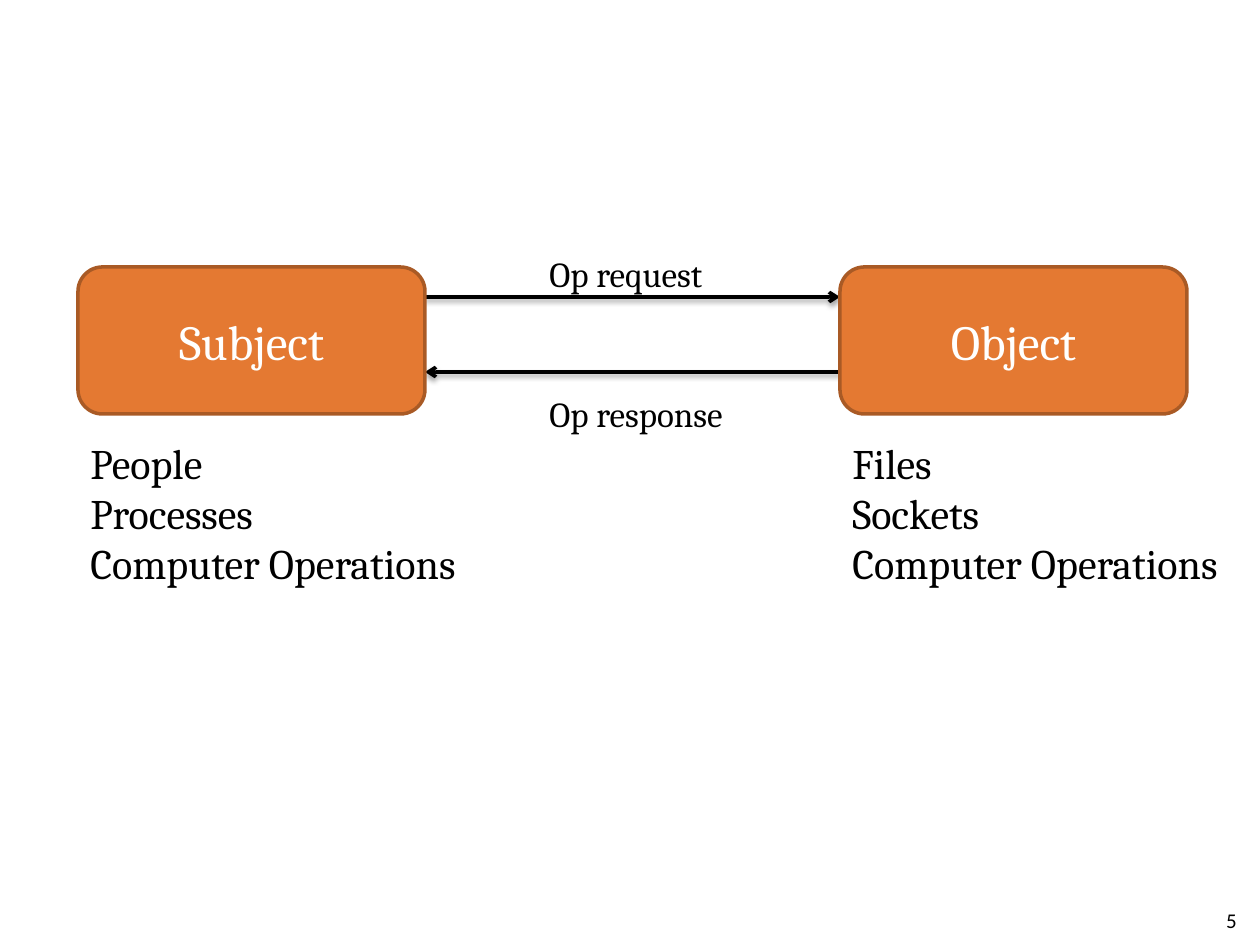
from dataclasses import dataclass

from lxml.etree import SubElement
from pptx import Presentation
from pptx.dml.color import RGBColor
from pptx.enum.shapes import MSO_CONNECTOR, MSO_SHAPE
from pptx.enum.text import MSO_ANCHOR, PP_ALIGN
from pptx.oxml.ns import qn
from pptx.util import Emu, Pt


@dataclass(frozen=True)
class Theme:
    ink: str = "000000"
    pale: str = "FFFFFE"
    fill: str = "E47932"
    edge: str = "A95A25"
    font: str = "Cambria"
    plain: str = "Calibri"
    head: int = 28
    body: int = 24
    label: int = 20
    foot: int = 12
    line: int = 2


LOOK = Theme()


def px(num):
    """Turn pixels, 126 to the inch, into EMU."""
    return Emu(round(num * 914400 / 126))


def write(frame, lines, size, color=LOOK.ink, font=LOOK.font, align=PP_ALIGN.LEFT):
    for i, line in enumerate(lines):
        para = frame.paragraphs[0] if i == 0 else frame.add_paragraph()
        para.alignment = align
        run = para.add_run()
        run.text = line
        run.font.size = Pt(size)
        run.font.name = font
        run.font.color.rgb = RGBColor.from_string(color)


def add_text(slide, area, lines, size, **style):
    box = slide.shapes.add_textbox(*map(px, area))
    box.text_frame.word_wrap = False
    write(box.text_frame, lines, size, **style)
    return box


def add_node(slide, area, name):
    node = slide.shapes.add_shape(MSO_SHAPE.ROUNDED_RECTANGLE, *map(px, area))
    node.shadow.inherit = False
    node.fill.solid()
    node.fill.fore_color.rgb = RGBColor.from_string(LOOK.fill)
    node.line.color.rgb = RGBColor.from_string(LOOK.edge)
    node.line.width = Pt(LOOK.line)
    node.text_frame.vertical_anchor = MSO_ANCHOR.MIDDLE
    write(node.text_frame, [name], LOOK.head, LOOK.pale, align=PP_ALIGN.CENTER)


def add_arrow(slide, start, end, y):
    """Draw a level arrow with a soft shadow below it."""
    arrow = slide.shapes.add_connector(
        MSO_CONNECTOR.STRAIGHT, px(start), px(y), px(end), px(y))
    arrow.line.color.rgb = RGBColor.from_string(LOOK.ink)
    arrow.line.width = Pt(LOOK.line)
    props = arrow.element.spPr
    SubElement(props.find(qn("a:ln")), qn("a:tailEnd"), type="arrow")
    effect = SubElement(props, qn("a:effectLst"))
    shade = SubElement(effect, qn("a:outerShdw"), blurRad="40000", dist="20000",
                       dir="5400000", rotWithShape="0")
    color = SubElement(shade, qn("a:srgbClr"), val=LOOK.ink)
    SubElement(color, qn("a:alpha"), val="38000")


def main():
    deck = Presentation()
    deck.slide_width, deck.slide_height = px(1260), px(945)
    slide = deck.slides.add_slide(deck.slide_layouts[6])

    left, right, top, wide, high = 78, 840, 267, 347, 147
    near = left + wide
    nodes = [
        (left, "Subject", ["People", "Processes", "Computer Operations"]),
        (right, "Object", ["Files", "Sockets", "Computer Operations"]),
    ]
    flows = [
        (near, right, 297, "Op request", 246, 192),
        (right, near, 372, "Op response", 386, 214),
    ]

    foot = add_text(slide, (955, 895, 294, 50), ["5"], LOOK.foot,
                    font=LOOK.plain, align=PP_ALIGN.RIGHT)
    foot.text_frame.word_wrap = True
    foot.text_frame.vertical_anchor = MSO_ANCHOR.MIDDLE

    for start, end, y, label, spot, width in flows:
        add_arrow(slide, start, end, y)
        add_text(slide, (537, spot, width, 55), [label], LOOK.label)
    for x, name, items in nodes:
        add_text(slide, (x, 431, 417, 165), items, LOOK.body)
        add_node(slide, (x, top, wide, high), name)

    deck.save("out.pptx")


if __name__ == "__main__":
    main()
